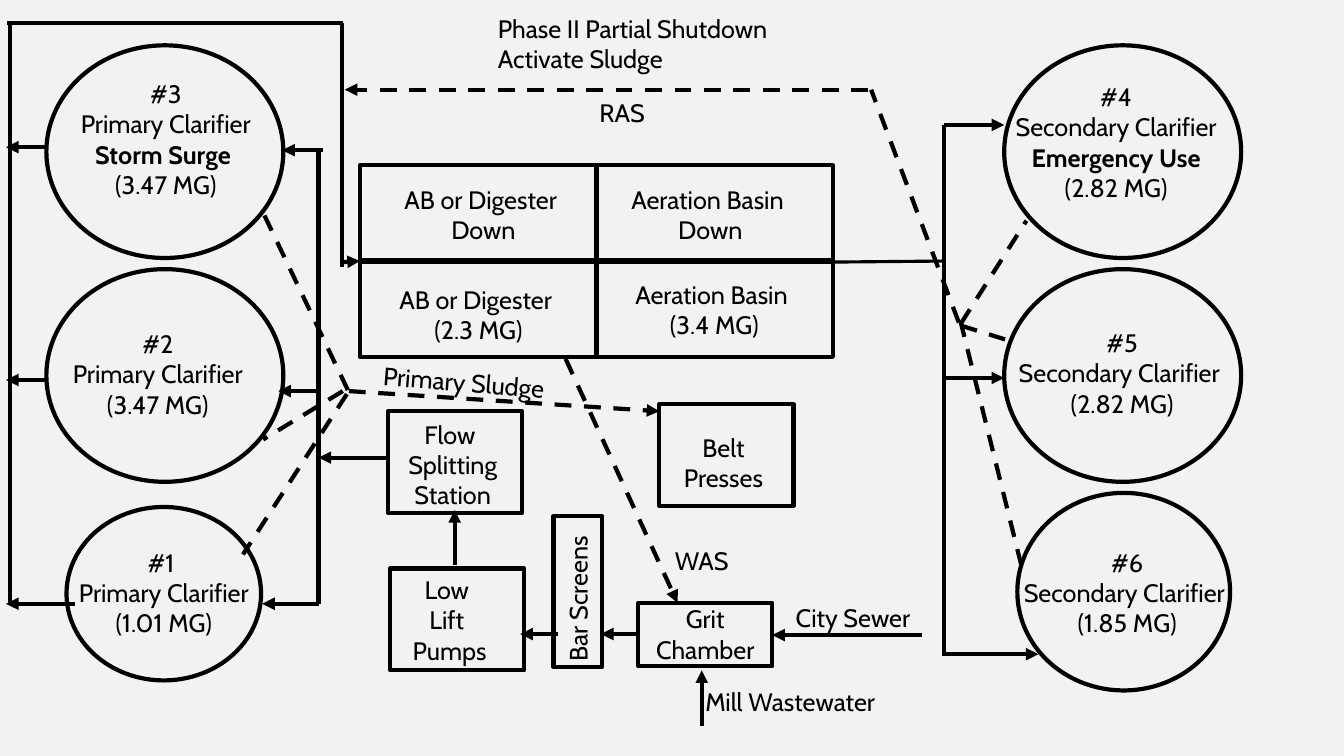
from pptx import Presentation
from pptx.dml.color import RGBColor
from pptx.enum.dml import MSO_LINE
from pptx.enum.shapes import MSO_CONNECTOR, MSO_SHAPE
from pptx.enum.text import MSO_AUTO_SIZE, PP_ALIGN
from pptx.oxml.ns import qn
from pptx.util import Inches, Pt
from lxml.etree import SubElement


def rgb(value):
    return RGBColor.from_string(value)


class FlowDiagram:
    font, size = "Cabin", 18
    ink, paper = "000000", "F2F2F2"

    def __init__(self, slide):
        self.s = slide
        fill = slide.background.fill
        fill.solid()
        fill.fore_color.rgb = rgb(self.paper)

    def outline(self, x, y, w, h, kind=MSO_SHAPE.RECTANGLE):
        sp = self.s.shapes.add_shape(kind, Inches(x), Inches(y), Inches(w), Inches(h))
        sp.shadow.inherit = False
        sp.fill.background()
        sp.line.color.rgb = rgb(self.ink)
        sp.line.width = Pt(3)

    def label(self, x, y, w, h, text, rotation=0, align=PP_ALIGN.CENTER, bold_line=None):
        sp = self.s.shapes.add_textbox(Inches(x), Inches(y), Inches(w), Inches(h))
        sp.rotation = rotation
        tf = sp.text_frame
        tf.word_wrap = True
        tf.auto_size = MSO_AUTO_SIZE.SHAPE_TO_FIT_TEXT
        tf.text = text
        for i, p in enumerate(tf.paragraphs):
            p.alignment = align
            for r in p.runs:
                r.font.name = self.font
                r.font.size = Pt(self.size)
                r.font.color.rgb = rgb(self.ink)
                r.font.bold = i == bold_line

    def line(self, x1, y1, x2, y2, arrow=False, dashed=False, width=3):
        c = self.s.shapes.add_connector(
            MSO_CONNECTOR.STRAIGHT, Inches(x1), Inches(y1), Inches(x2), Inches(y2))
        c.line.color.rgb = rgb(self.ink)
        c.line.width = Pt(width)
        if dashed:
            c.line.dash_style = MSO_LINE.DASH
        if arrow:
            SubElement(c.line._get_or_add_ln(), qn("a:tailEnd"), type="triangle")
        SubElement(c._element.spPr, qn("a:effectLst"))

    def arrow(self, *ends):
        self.line(*ends, arrow=True)


prs = Presentation()
prs.slide_width, prs.slide_height = Inches(13.33), Inches(7.5)
d = FlowDiagram(prs.slides.add_slide(prs.slide_layouts[6]))

# Basins: a two by two grid
for x in (3.57, 5.91):
    for y in (1.64, 2.6):
        d.outline(x, y, 2.35, 0.94)
for x, y, text in [
    (3.82, 1.78, "AB or Digester \nDown"),
    (3.77, 2.77, "AB or Digester \n(2.3 MG)"),
    (6.07, 1.78, "Aeration Basin \nDown"),
    (6.11, 2.72, "Aeration Basin \n(3.4 MG)"),
]:
    d.label(x, y, 1.95, 0.71, text)

# Clarifiers: ellipse, label box, text, bold line
for ellipse, box, text, bold_line in [
    ((0.46, 0.45, 2.35, 2.11), (0.68, 0.73, 1.93, 1.62),
     "#3\nPrimary Clarifier\nStorm Surge \n(3.47 MG)", 2),
    ((0.46, 2.67, 2.35, 2.11), (0.6, 3.21, 1.93, 1.01),
     "#2\nPrimary Clarifier \n(3.47 MG)", None),
    ((0.66, 5.03, 1.93, 1.72), (0.66, 5.38, 1.93, 1.01),
     "#1 \nPrimary Clarifier \n(1.01 MG)", None),
    ((9.96, 0.45, 2.35, 2.11), (9.82, 0.76, 2.5, 1.62),
     "#4\nSecondary Clarifier\nEmergency Use\n(2.82 MG)", 2),
    ((9.96, 2.67, 2.35, 2.11), (9.88, 3.2, 2.5, 1.01),
     "#5\nSecondary Clarifier \n(2.82 MG)", None),
    ((10.09, 4.89, 2.11, 1.96), (9.93, 5.38, 2.5, 1.01),
     "#6\nSecondary Clarifier \n(1.85 MG)", None),
]:
    d.outline(*ellipse, MSO_SHAPE.OVAL)
    d.label(*box, text, bold_line=bold_line)

# Stations: box, label box, text, rotation
for box, label_box, text, rotation in [
    ((3.85, 4.08, 1.33, 1.01), (3.92, 4.11, 1.14, 1.01), "Flow \nSplitting Station", 0),
    ((3.87, 5.64, 1.33, 1.01), (3.89, 5.65, 1.14, 1.01), "Low \nLift \nPumps", 0),
    ((5.49, 5.12, 0.48, 1.5), (4.98, 5.74, 1.5, 0.4), "Bar Screens", 270),
    ((6.33, 5.98, 1.33, 0.63), (6.33, 5.94, 1.33, 0.71), "Grit Chamber", 0),
    ((6.54, 4.01, 1.33, 1.01), (6.6, 4.24, 1.15, 0.71), "Belt Presses", 0),
]:
    d.outline(*box)
    d.label(*label_box, text, rotation)

# Basins to secondary clarifiers
d.line(8.26, 2.6, 9.36, 2.59, width=2.25)
d.line(9.36, 6.51, 9.36, 1.24)
for y, end in [(1.24, 9.96), (3.75, 9.96), (6.49, 10.3)]:
    d.arrow(9.36, y, end, y)

# Inflow through the stations
for ends in [
    (9.14, 6.3, 7.66, 6.3),
    (6.96, 7.2, 6.96, 6.65),
    (6.33, 6.29, 5.96, 6.29),
    (5.53, 6.29, 5.16, 6.29),
    (4.51, 5.61, 4.51, 5.06),
    (3.86, 4.54, 3.16, 4.54),
]:
    d.arrow(*ends)

# Flow splitting to primary clarifiers
d.line(3.16, 5.99, 3.16, 1.5)
for start, y, end in [(3.2, 1.49, 2.8), (3.16, 3.88, 2.76), (3.16, 5.99, 2.6)]:
    d.arrow(start, y, end, y)

# Primary clarifiers to basins
d.line(0.1, 5.99, 0.1, 0.23)
for start, y in [(0.46, 1.46), (0.46, 3.77), (0.74, 5.99)]:
    d.arrow(start, y, 0.06, y)
d.line(3.4, 0.23, 0.07, 0.23)
d.line(3.39, 0.23, 3.39, 2.65)
d.arrow(3.4, 2.6, 3.57, 2.59)

# Sludge lines
for ends in [
    (10.13, 5.61, 9.53, 3.2),
    (9.53, 3.21, 10.18, 2.19),
    (9.53, 3.23, 10.01, 3.38),
    (9.51, 3.2, 8.64, 0.89),
    (3.45, 3.87, 2.6, 2.09),
    (3.4, 3.88, 2.61, 4.36),
    (3.44, 3.91, 2.41, 5.5),
]:
    d.line(*ends, dashed=True)
for ends in [
    (8.61, 0.89, 3.42, 0.89),
    (3.46, 3.88, 6.54, 4.08),
    (5.61, 3.56, 6.72, 5.98),
]:
    d.line(*ends, arrow=True, dashed=True)

# Flow names and title
for x, y, w, text, rotation in [
    (7.75, 5.93, 1.42, "City Sewer", 0),
    (6.77, 6.76, 2.19, "Mill Wastewater ", 0),
    (5.6, 0.92, 1.14, "RAS", 0),
    (6.39, 5.36, 1.14, "WAS", 0),
    (3.57, 3.59, 2.06, "Primary Sludge", 4.5),
]:
    d.label(x, y, w, 0.4, text, rotation)
d.label(4.84, 0.08, 3.49, 0.71, "Phase II Partial Shutdown Activate Sludge",
        align=PP_ALIGN.LEFT)

prs.save("out.pptx")
